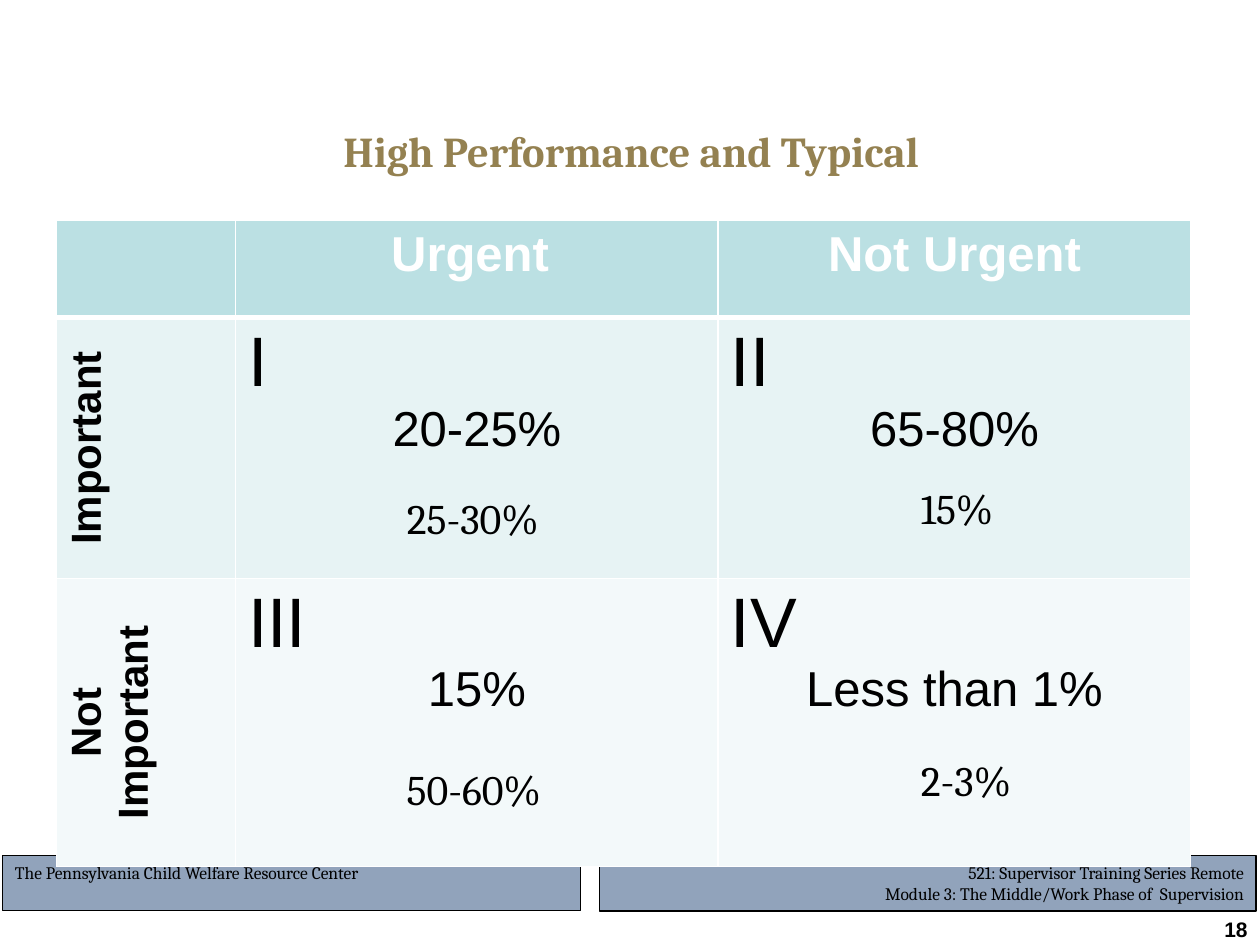
from dataclasses import dataclass

from lxml import etree
from pptx import Presentation
from pptx import util as u
from pptx.dml import color
from pptx.enum import shapes, text
from pptx.oxml import ns

WIDE, HIGH = u.Inches(10), u.Inches(7.5)
HUES = {"ink": "000000", "white": "FFFFFF", "gold": "948151", "bar": "91A3BB",
        "head": "BBE0E3", "top": "E7F3F4", "low": "F3F9FA"}
LEFT, MID, RIGHT = text.PP_ALIGN.LEFT, text.PP_ALIGN.CENTER, text.PP_ALIGN.RIGHT


@dataclass
class Box:
    x: float
    y: float
    w: float
    h: float


@dataclass
class Style:
    size: float
    font: str = "Cambria"
    hue: str = "ink"
    bold: bool = False
    align: text.PP_ALIGN = LEFT


@dataclass
class Label:
    words: str
    box: Box
    style: Style
    anchor: text.MSO_ANCHOR = text.MSO_ANCHOR.TOP


@dataclass
class Bar:
    words: str
    box: Box
    line: float
    align: text.PP_ALIGN


FOOT = 90.53
BARS = [
    Bar("521: Supervisor Training Series Remote\n"
        "Module 3: The Middle/Work Phase of  Supervision",
        Box(47.6, FOOT, 52.1, 5.87), 0.75, RIGHT),
    Bar("The Pennsylvania Child Welfare Resource Center",
        Box(0.2, FOOT, 45.9, 5.87), 0.5, LEFT),
]
NOTE = Style(24)
LABELS = [
    Label("High Performance and Typical", Box(5.1, 11.6, 90, 8.67),
          Style(24.3, hue="gold", bold=True, align=MID), text.MSO_ANCHOR.MIDDLE),
    Label("18", Box(80.9, 96.53, 19.1, 3.47),
          Style(12, "Arial", bold=True, align=RIGHT), text.MSO_ANCHOR.MIDDLE),
    Label("25-30%", Box(31.3, 51.47, 14.2, 6.8), NOTE),
    Label("15%", Box(72.1, 50.4, 8.9, 6.8), NOTE),
    Label("2-3%", Box(72.1, 79.2, 11.5, 6.8), NOTE),
    Label("50-60%", Box(31.3, 80.13, 15.6, 6.8), NOTE),
]
COLS = [14.2, 38.3, 37.5]
ROWS = [10.27, 27.6, 30.5]
GRID = Box(4.5, 23.33, sum(COLS), sum(ROWS))
CELLS = [
    ["", "Urgent ", "Not Urgent"],
    ["Important", "I\n20-25%", "II\n65-80%"],
    ["Not\vImportant", "III\n15%", "IV\nLess than 1%"],
]
FILLS = ["head", "top", "low"]
HEAD = Style(28, "Arial", "white", True, MID)
SIDE = Style(24, "Arial", bold=True, align=MID)
MARK = Style(40, "Arial")
SHARE = Style(28, "Arial", align=MID)


def rgb(hue: str) -> color.RGBColor:
    return color.RGBColor.from_string(HUES[hue])


def across(share: float) -> int:
    return round(WIDE * share / 100)


def down(share: float) -> int:
    return round(HIGH * share / 100)


def place(box: Box) -> tuple:
    return across(box.x), down(box.y), across(box.w), down(box.h)


def write(frame, words: str, *styles: Style) -> None:
    frame.text = words
    frame.word_wrap = True
    for i, para in enumerate(frame.paragraphs):
        style = styles[min(i, len(styles) - 1)]
        para.alignment = style.align
        for run in para.runs:
            run.font.size = u.Pt(style.size)
            run.font.name = style.font
            run.font.bold = style.bold
            run.font.color.rgb = rgb(style.hue)


def draw_bar(slide, bar: Bar) -> None:
    shape = slide.shapes.add_shape(shapes.MSO_SHAPE.RECTANGLE, *place(bar.box))
    shape.shadow.inherit = False
    shape.fill.solid()
    shape.fill.fore_color.rgb = rgb("bar")
    shape.line.color.rgb = rgb("ink")
    shape.line.width = u.Pt(bar.line)
    shape.text_frame.vertical_anchor = text.MSO_ANCHOR.TOP
    write(shape.text_frame, bar.words, Style(10, align=bar.align))


def draw_label(slide, label: Label) -> None:
    frame = slide.shapes.add_textbox(*place(label.box)).text_frame
    frame.vertical_anchor = label.anchor
    write(frame, label.words, label.style)


def edge(cell, side: str, width: float) -> None:
    props = cell._tc.get_or_add_tcPr()
    line = etree.SubElement(props, ns.qn(f"a:ln{side}"), w=str(u.Pt(width)))
    fill = etree.SubElement(line, ns.qn("a:solidFill"))
    etree.SubElement(fill, ns.qn("a:srgbClr"), val=HUES["white"])


def draw_cell(cell, row: int, col: int) -> None:
    heavy = {(0, "B"), (1, "T")}
    for side in "LRTB":
        edge(cell, side, 3 if (row, side) in heavy else 1)
    cell.fill.solid()
    cell.fill.fore_color.rgb = rgb(FILLS[row])
    if row == 0:
        styles = [HEAD]
    elif col == 0:
        styles = [SIDE]
        cell._tc.get_or_add_tcPr().set("vert", "vert270")
    else:
        styles = [MARK, SHARE]
    if CELLS[row][col]:
        write(cell.text_frame, CELLS[row][col], *styles)


def draw_grid(slide) -> None:
    table = slide.shapes.add_table(len(ROWS), len(COLS), *place(GRID)).table
    for col, share in zip(table.columns, COLS):
        col.width = across(share)
    for row, share in zip(table.rows, ROWS):
        row.height = down(share)
    for r in range(len(ROWS)):
        for c in range(len(COLS)):
            draw_cell(table.cell(r, c), r, c)


def main() -> None:
    deck = Presentation()
    deck.slide_width, deck.slide_height = WIDE, HIGH
    slide = deck.slides.add_slide(deck.slide_layouts[6])
    for bar in BARS:
        draw_bar(slide, bar)
    draw_grid(slide)
    for label in LABELS:
        draw_label(slide, label)
    deck.save("out.pptx")


if __name__ == "__main__":
    main()
